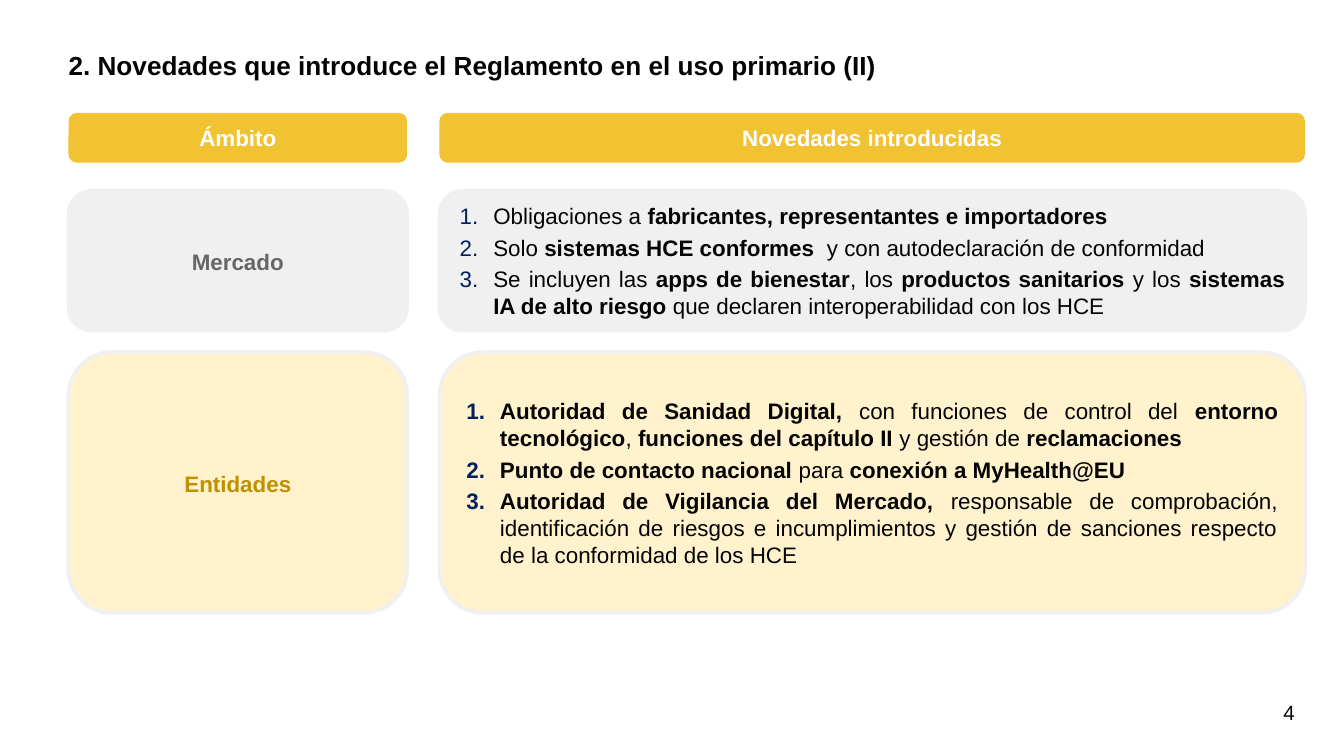
from lxml import etree
from pptx import Presentation, util as u
from pptx.dml.color import RGBColor
from pptx.enum import shapes, text
from pptx.oxml.ns import qn

TITLE = "2. Novedades que introduce el Reglamento en el uso primario (II)"
HEADS = ["Ámbito", "Novedades introducidas"]
ROWS = [
    {"name": "Mercado", "ink": "666666", "fill": "F0F0F0", "top": 142, "high": 104,
     "items": [
         "Obligaciones a *fabricantes, representantes e importadores*",
         "Solo *sistemas HCE conformes  *y con autodeclaración de conformidad",
         "Se incluyen las *apps de bienestar*, los *productos sanitarios *y los "
         "*sistemas IA de alto riesgo *que declaren interoperabilidad con los HCE"]},
    {"name": "Entidades", "ink": "BF9000", "fill": "FFF2CC", "top": 262, "high": 194,
     "items": [
         "*Autoridad de Sanidad Digital, *con funciones de control del *entorno "
         "tecnológico*, *funciones del capítulo II* y gestión de *reclamaciones*",
         "*Punto de contacto nacional *para *conexión a MyHealth@EU*",
         "*Autoridad de Vigilancia del Mercado, *responsable de comprobación, "
         "identificación de riesgos e incumplimientos y gestión de sanciones "
         "respecto de la conformidad de los HCE"]},
]
PAGE = "4"
THEME = {"font": "Arial", "ink": "040404", "head": "F1C232", "white": "FFFFFF",
         "edge": "F0F0F0", "num": "002060",
         "title": 14, "body": 12, "page": 11}
COLS = [(51, 252), (327, 644)]
HEAD_TOP, HEAD_HIGH = 84, 37
LEFT, MID, JUST = text.PP_ALIGN.LEFT, text.PP_ALIGN.CENTER, text.PP_ALIGN.JUSTIFY
CURVE = 0.05


def px(n):
    return u.Emu(round(n) * 9144)


def rgb(code):
    return RGBColor.from_string(code)


def place(item, x, y, w, h):
    item.left, item.top, item.width, item.height = map(px, (x, y, w, h))


def frame(item, padx, pady, anchor):
    box = item.text_frame
    box.word_wrap = True
    box.auto_size = text.MSO_AUTO_SIZE.NONE
    box.vertical_anchor = anchor
    box.margin_left = box.margin_right = px(padx)
    box.margin_top = box.margin_bottom = px(pady)
    return box


def style(para, size, ink, bold=None, align=LEFT):
    para.alignment = align
    font = para.font
    font.name, font.size, font.bold = THEME["font"], u.Pt(size), bold
    font.color.rgb = rgb(ink)


def write(item, words, size, ink, bold=None, align=LEFT, pad=(10, 7),
          anchor=text.MSO_ANCHOR.MIDDLE):
    para = frame(item, *pad, anchor).paragraphs[0]
    para.text = words
    style(para, size, ink, bold, align)
    return para


def card(slide, x, y, w, h, fill, edge=None):
    item = slide.shapes.add_shape(shapes.MSO_SHAPE.ROUNDED_RECTANGLE,
                                  *map(px, (x, y, w, h)))
    item.shadow.inherit = False
    item.fill.solid()
    item.fill.fore_color.rgb = rgb(fill)
    if edge:
        item.line.color.rgb = rgb(edge)
        item.line.width = u.Pt(2)
    else:
        item.line.fill.background()
    return item


def number(para):
    props = para._p.get_or_add_pPr()
    props.set("marL", str(px(25)))
    props.set("indent", str(-px(25)))
    tint = etree.SubElement(props, qn("a:buClr"))
    etree.SubElement(tint, qn("a:srgbClr"), val=THEME["num"])
    etree.SubElement(props, qn("a:buFont"), typeface=THEME["font"])
    etree.SubElement(props, qn("a:buAutoNum"), type="arabicPeriod")


def fill_list(item, lines, pad):
    box = frame(item, 10 + pad, 7 + pad, text.MSO_ANCHOR.MIDDLE)
    for i, line in enumerate(lines):
        para = box.add_paragraph() if i else box.paragraphs[0]
        number(para)
        para.space_before = u.Pt(2.4 if i else 0)
        style(para, THEME["body"], THEME["ink"], align=JUST)
        for j, part in enumerate(line.split("*")):
            if part:
                run = para.add_run()
                run.text = part
                run.font.bold = j % 2 == 1


def main():
    deck = Presentation()
    deck.slide_width = px(1000)
    deck.slide_height = deck.slide_width * 9 // 16
    slide = deck.slides.add_slide(deck.slide_layouts[3])
    title, *lists = slide.placeholders

    place(title, 51, 37, 922, 37)
    write(title, TITLE, THEME["title"], THEME["ink"], True, pad=(0, 0),
          anchor=text.MSO_ANCHOR.TOP)

    for (x, w), head in zip(COLS, HEADS):
        item = card(slide, x, HEAD_TOP, w, HEAD_HIGH, THEME["head"])
        write(item, head, THEME["body"], THEME["white"], True, MID)

    for row, body in zip(ROWS, lists):
        y, h = row["top"], row["high"]
        for x, w in COLS:
            card(slide, x, y, w, h, row["fill"], THEME["edge"])
        place(body, x, y, w, h)
        fill_list(body, row["items"], h * CURVE)
        slide.shapes._spTree.append(body._element)

        x, w = COLS[0]
        label = slide.shapes.add_textbox(
            *map(px, (x + 27, y + h * 0.24, w - 54, h * 0.52)))
        para = write(label, row["name"], THEME["body"], row["ink"], True, MID,
                     pad=(10, 10))
        para.line_spacing = 1.06

    page = slide.shapes.add_textbox(*map(px, (945, 516, 58, 44)))
    write(page, PAGE, THEME["page"], THEME["ink"], pad=(10, 5),
          anchor=text.MSO_ANCHOR.TOP)
    deck.save("out.pptx")


if __name__ == "__main__":
    main()
